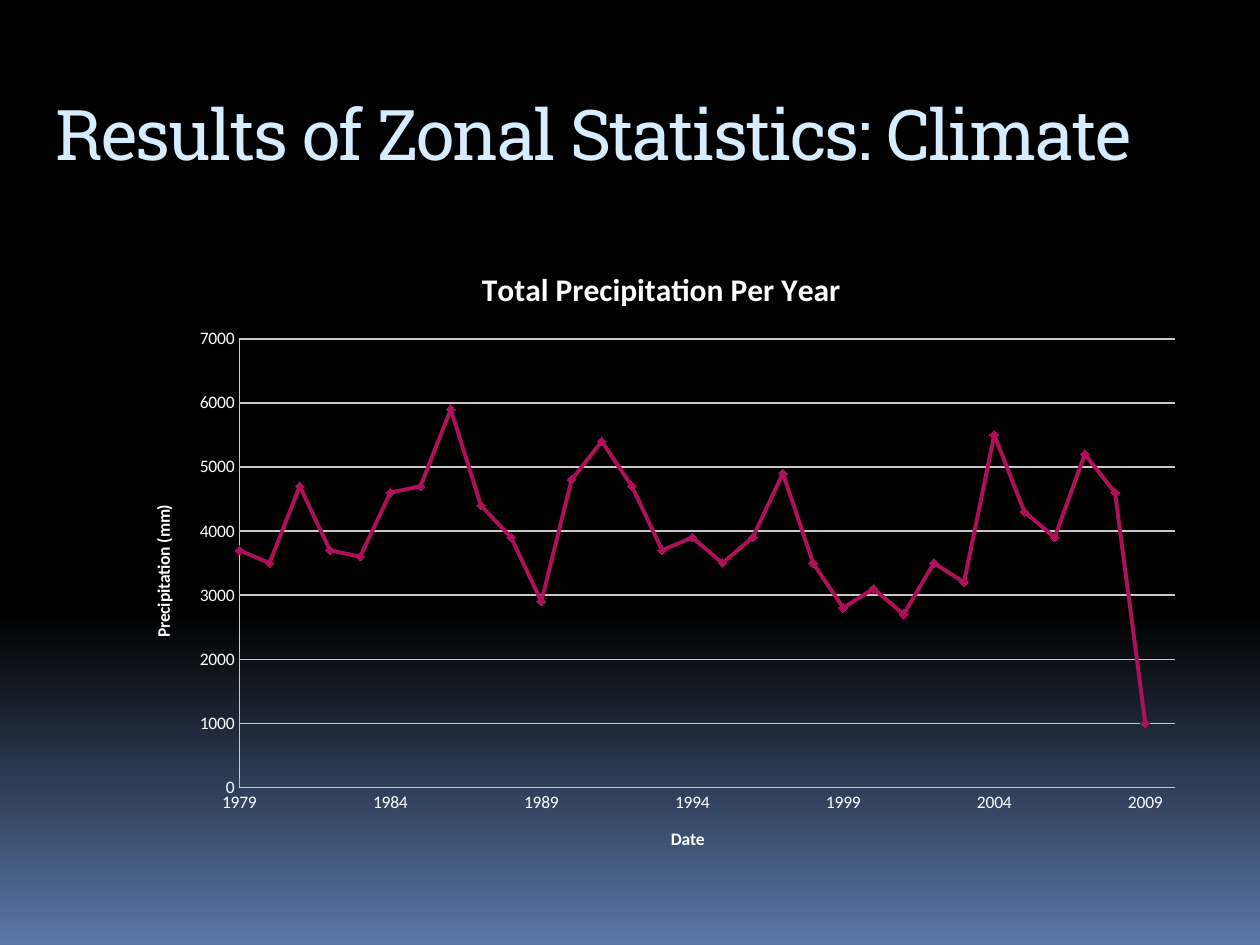
from lxml.etree import SubElement
from pptx import Presentation
from pptx.chart.data import XyChartData
from pptx.dml.color import RGBColor
from pptx.enum.chart import XL_CHART_TYPE, XL_MARKER_STYLE, XL_TICK_MARK
from pptx.enum.text import MSO_ANCHOR
from pptx.oxml.ns import qn
from pptx.util import Emu, Pt

PX = 9144
CHART_WIDTH, CHART_HEIGHT = 850, 500
COLORS = {
    "black": "000000",
    "blue": "5B77A8",
    "title": "D6ECFF",
    "white": "FFFFFF",
    "grid": "C8C8C8",
    "line": "AE1059",
}
FIRST_YEAR = 1979
PRECIPITATION = [
    3700, 3500, 4700, 3700, 3600, 4600, 4700, 5900, 4400, 3900, 2900,
    4800, 5400, 4700, 3700, 3900, 3500, 3900, 4900, 3500, 2800, 3100,
    2700, 3500, 3200, 5500, 4300, 3900, 5200, 4600, 1000,
]


def color(name):
    return RGBColor.from_string(COLORS[name])


def set_layout(element, position, **lengths):
    for old in element.findall(qn("c:layout")):
        element.remove(old)
    layout = SubElement(element, qn("c:layout"))
    element.insert(position, layout)
    manual = SubElement(layout, qn("c:manualLayout"))
    if "w" in lengths:
        SubElement(manual, qn("c:layoutTarget")).set("val", "inner")
    for key in ("x", "y"):
        SubElement(manual, qn(f"c:{key}Mode")).set("val", "edge")
    for key, length in lengths.items():
        whole = CHART_WIDTH if key in "xw" else CHART_HEIGHT
        SubElement(manual, qn(f"c:{key}")).set("val", str(length / whole))


class SlideBuilder:
    heading_font = "Roboto Slab"
    body_font = "Calibri"

    def __init__(self, slide):
        self.slide = slide

    def background(self, start, end, start_position):
        fill = self.slide.background.fill
        fill.gradient()
        fill.gradient_angle = 270
        for stop, name, position in zip(
            fill.gradient_stops, (start, end), (start_position, 1)
        ):
            stop.color.rgb = color(name)
            stop.position = position

    def style_font(self, font, size, name="white", bold=False, family=None):
        font.name = family or self.body_font
        font.size = Pt(size)
        font.bold = bold
        font.color.rgb = color(name)

    def heading(self, text, *box):
        shape = self.slide.shapes.add_textbox(*(Emu(n * PX) for n in box))
        text_frame = shape.text_frame
        text_frame.word_wrap = True
        text_frame.vertical_anchor = MSO_ANCHOR.TOP
        text_frame.text = text
        run = text_frame.paragraphs[0].runs[0]
        self.style_font(run.font, 40, "title", family=self.heading_font)
        run.font._element.set("spc", "-100")

    def chart_label(self, title, text, size, x, y):
        title.text_frame.text = text
        run = title.text_frame.paragraphs[0].runs[0]
        self.style_font(run.font, size, bold=True)
        set_layout(title._element, 1, x=x, y=y)

    def axis(self, axis, text, x, y, limits, step, gridlines):
        axis.minimum_scale, axis.maximum_scale = limits
        axis.major_unit = step
        axis.major_tick_mark = axis.minor_tick_mark = XL_TICK_MARK.NONE
        axis.has_major_gridlines = gridlines
        lines = [axis.format.line]
        if gridlines:
            lines.append(axis.major_gridlines.format.line)
        for line in lines:
            line.color.rgb = color("grid")
            line.width = Pt(0.75)
        axis.tick_labels.number_format = "0"
        axis.tick_labels.number_format_is_linked = False
        self.style_font(axis.tick_labels.font, 10)
        self.chart_label(axis.axis_title, text, 10, x, y)

    def precipitation_chart(self, left, top):
        data = XyChartData()
        points = data.add_series("Series 1")
        for year, value in enumerate(PRECIPITATION, FIRST_YEAR):
            points.add_data_point(year, value)
        box = (left, top, CHART_WIDTH, CHART_HEIGHT)
        chart = self.slide.shapes.add_chart(
            XL_CHART_TYPE.XY_SCATTER_LINES, *(Emu(n * PX) for n in box), data
        ).chart
        self.style_font(chart.font, 10)
        chart.has_legend = False
        chart.has_title = True
        self.chart_label(
            chart.chart_title, "Total Precipitation Per Year", 18, 278, 13
        )
        self.axis(chart.category_axis, "Date", 430, 459, (1979, 2010), 5, False)
        self.axis(
            chart.value_axis, "Precipitation (mm)", 18, 203, (0, 7000), 1000, True
        )
        plot = chart.plots[0]
        plot.vary_by_categories = False
        series = plot.series[0]
        series.smooth = False
        series.format.line.color.rgb = color("line")
        series.format.line.width = Pt(2.25)
        marker = series.marker
        marker.style = XL_MARKER_STYLE.DIAMOND
        marker.size = 5
        marker.format.fill.solid()
        marker.format.fill.fore_color.rgb = color("line")
        marker.format.line.color.rgb = color("line")
        plot_area = chart._chartSpace.find(".//" + qn("c:plotArea"))
        set_layout(plot_area, 0, x=90, y=74, w=743, h=356)


def main():
    presentation = Presentation()
    presentation.slide_width = Emu(1000 * PX)
    presentation.slide_height = Emu(750 * PX)
    slide = presentation.slides.add_slide(presentation.slide_layouts[6])
    builder = SlideBuilder(slide)
    builder.background("black", "blue", 0.65)
    builder.heading("Results of Zonal Statistics: Climate", 34, 67, 933, 133)
    builder.precipitation_chart(100, 195)
    presentation.save("out.pptx")


if __name__ == "__main__":
    main()
